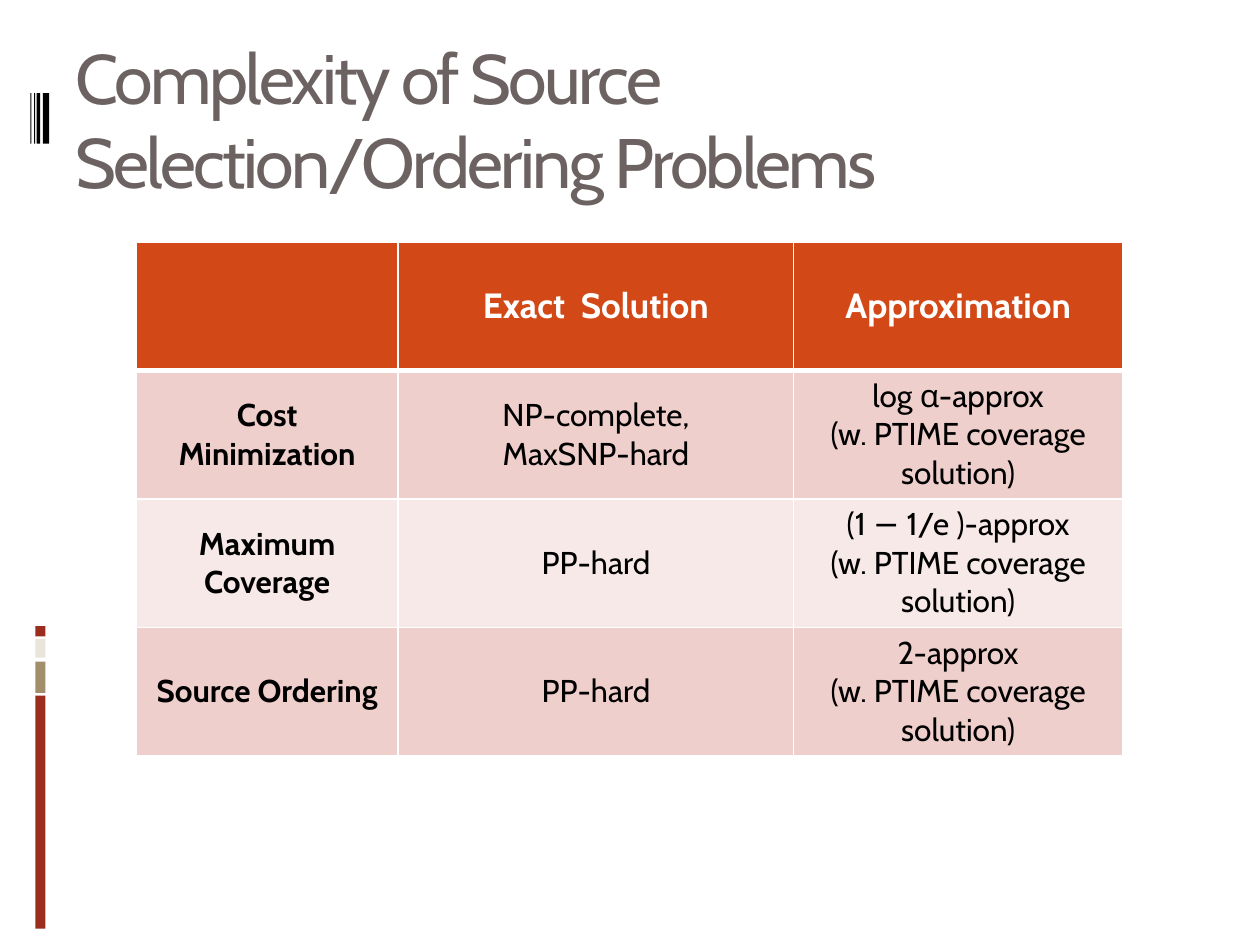
from lxml.etree import SubElement as Sub
from pptx import Presentation
from pptx.dml.color import RGBColor as RGB
from pptx.enum.shapes import MSO_SHAPE as Shape
from pptx.enum.text import MSO_ANCHOR as Anchor, PP_ALIGN as Align
from pptx.oxml.ns import qn
from pptx.util import Inches, Pt

WHITE = RGB(0xFF, 0xFF, 0xFF)
BLACK = RGB(0, 0, 0)
GRAY = RGB(0x6C, 0x62, 0x62)
RED = RGB(0x9B, 0x2D, 0x1F)
TAN = RGB(0xA2, 0x8E, 0x6A)
CREAM = RGB(0xE9, 0xE5, 0xDC)
ORANGE = RGB(0xD3, 0x48, 0x17)
PINK = RGB(0xEF, 0xCF, 0xCC)
PALE = RGB(0xF7, 0xE9, 0xE8)

NOTE = "(w. PTIME coverage solution)"
ROWS = [
    ["", "Exact  Solution", "Approximation"],
    ["Cost Minimization", "NP-complete,\nMaxSNP-hard", f"log α-approx\n{NOTE}"],
    ["Maximum Coverage", "PP-hard", f"(1 − 1/e )-approx\n{NOTE}"],
    ["Source Ordering", "PP-hard", f"2-approx\n{NOTE}"],
]
# top, height, colour
BARS = [(4.97, 0.08, RED), (5.07, 0.15, CREAM), (5.25, 0.25, TAN), (5.52, 1.85, RED)]
# left, width
STRIPES = [(0.24, 0.01), (0.27, 0.01), (0.29, 0.03), (0.34, 0.05)]


class Deck:
    face = "Cabin"

    def __init__(self, slide):
        self.slide = slide

    def style(self, para, size, color, bold=False):
        font = para.font
        font.name, font.size, font.bold = self.face, Pt(size), bold
        font.color.rgb = color

    def block(self, x, y, w, h, color):
        box = self.slide.shapes.add_shape(
            Shape.RECTANGLE, Inches(x), Inches(y), Inches(w), Inches(h))
        box.shadow.inherit = False
        box.fill.solid()
        box.fill.fore_color.rgb = color
        box.line.fill.background()

    def title(self, text, x, y, w, h):
        box = self.slide.shapes.add_textbox(Inches(x), Inches(y), Inches(w), Inches(h))
        frame = box.text_frame
        frame.word_wrap = True
        frame.vertical_anchor = Anchor.MIDDLE
        para = frame.paragraphs[0]
        self.style(para, 40, GRAY)
        run = para.add_run()
        run.text = text
        run._r.get_or_add_rPr().set("spc", "-150")

    def edge(self, cell, side, width):
        """Draw one white border; call it before the cell's fill is set."""
        line = Sub(cell._tc.get_or_add_tcPr(), qn(f"a:ln{side}"), w=str(Pt(width)))
        Sub(Sub(line, qn("a:solidFill")), qn("a:srgbClr"), val=str(WHITE))

    def cell(self, cell, text, row, col):
        head = row == 0
        for side in "LRTB":
            thick = (head and side == "B") or (row == 1 and side == "T")
            self.edge(cell, side, 3 if thick else 1)
        cell.fill.solid()
        cell.fill.fore_color.rgb = ORANGE if head else PINK if row % 2 else PALE
        cell.vertical_anchor = Anchor.MIDDLE
        cell.text = text
        for para in cell.text_frame.paragraphs:
            para.alignment = Align.CENTER
            self.style(para, 20 if head else 18, WHITE if head else BLACK,
                       head or col == 0)

    def table(self, rows, x, y, widths, height):
        table = self.slide.shapes.add_table(
            len(rows), len(widths), Inches(x), Inches(y),
            Inches(sum(widths)), Inches(height * len(rows))).table
        for col, width in zip(table.columns, widths):
            col.width = Inches(width)
        for r, texts in enumerate(rows):
            table.rows[r].height = Inches(height)
            for c, text in enumerate(texts):
                self.cell(table.cell(r, c), text, r, c)


def main():
    prs = Presentation()
    prs.slide_width, prs.slide_height = Inches(10), Inches(7.5)
    deck = Deck(prs.slides.add_slide(prs.slide_layouts[6]))
    for y, h, color in BARS:
        deck.block(0.28, y, 0.08, h, color)
    for x, w in STRIPES:
        deck.block(x, 0.74, w, 0.4, BLACK)
    deck.title("Complexity of Source Selection/Ordering Problems", 0.5, 0.23, 8.92, 1.42)
    deck.table(ROWS, 1.08, 1.92, [2.08, 3.14, 2.61], 1.02)
    prs.save("out.pptx")


if __name__ == "__main__":
    main()
